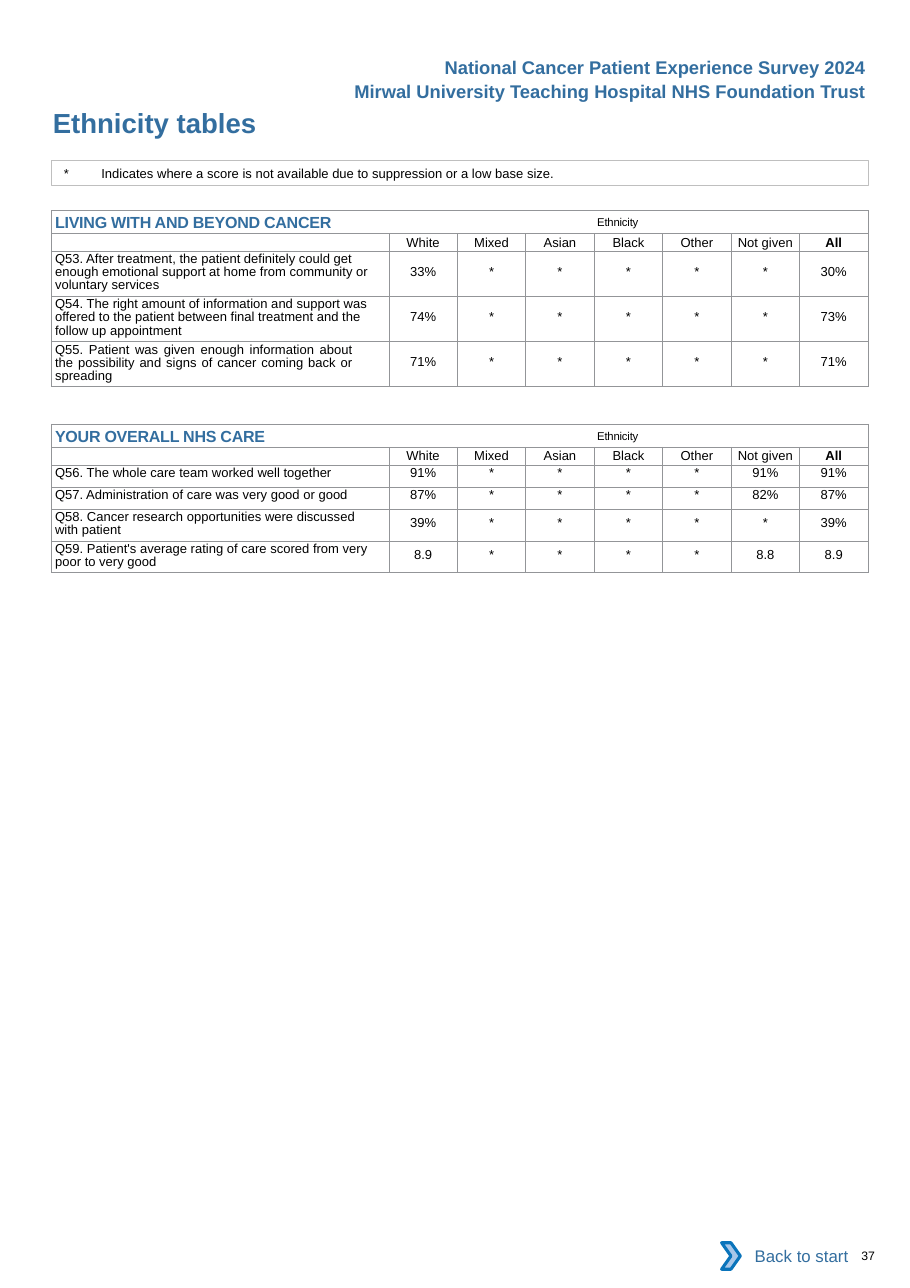
import pptx
import pptx.util
import pptx.dml.color
import pptx.enum.shapes
import pptx.enum.text
import pptx.oxml.ns
from lxml import etree

Inches = pptx.util.Inches
Pt = pptx.util.Pt
ALIGN = pptx.enum.text.PP_ALIGN
ANCHOR = pptx.enum.text.MSO_ANCHOR
SHAPE = pptx.enum.shapes.MSO_SHAPE
qn = pptx.oxml.ns.qn

BLUE, BLACK, GRID = "336E9F", "000000", "939598"
TITLE = "Ethnicity tables"
HEADINGS = [
    ("Mirwal University Teaching Hospital NHS Foundation Trust", 3.09, 0.68),
    ("National Cancer Patient Experience Survey 2024", 3.92, 0.46),
]
NOTE = "*\tIndicates where a score is not available due to suppression or a low base size."
GROUPS = ["White", "Mixed", "Asian", "Black", "Other", "Not given", "All"]
TABLES = [
    ("LIVING WITH AND BEYOND CANCER", 1.91, [
        ("Q53. After treatment, the patient definitely could get enough emotional support "
         "at home from community or voluntary services", 3, "33% * * * * * 30%"),
        ("Q54. The right amount of information and support was offered to the patient "
         "between final treatment and the follow up appointment", 3, "74% * * * * * 73%"),
        ("Q55. Patient was given enough information about the possibility and signs of "
         "cancer coming back or spreading", 3, "71% * * * * * 71%"),
    ]),
    ("YOUR OVERALL NHS CARE", 3.85, [
        ("Q56. The whole care team worked well together", 1, "91% * * * * 91% 91%"),
        ("Q57. Administration of care was very good or good", 1, "87% * * * * 82% 87%"),
        ("Q58. Cancer research opportunities were discussed with patient", 2,
         "39% * * * * * 39%"),
        ("Q59. Patient's average rating of care scored from very poor to very good", 2,
         "8.9 * * * * 8.8 8.9"),
    ]),
]
JUSTIFIED = "Q55"
LEFT, WIDTH, QUESTION_WIDTH = 0.47, 7.41, 3.06
SCORE_WIDTH = (WIDTH - QUESTION_WIDTH) / len(GROUPS)
HEADER_HEIGHTS = [0.21, 0.16]
ROW_HEIGHTS = {1: 0.2, 2: 0.29, 3: 0.41}
SCORE_TOPS = {1: 0.01, 2: 0.06, 3: 0.12}


def color(value):
    return pptx.dml.color.RGBColor.from_string(value)


def style(font, size, value=BLACK, bold=False):
    font.name = "Arial"
    font.size = Pt(size)
    font.bold = bold
    font.color.rgb = color(value)


def set_margins(target, left=0, top=0, right=0, bottom=0):
    target.margin_left, target.margin_top = Inches(left), Inches(top)
    target.margin_right, target.margin_bottom = Inches(right), Inches(bottom)


def add_tab(paragraph, position):
    tabs = etree.SubElement(paragraph._p.get_or_add_pPr(), qn("a:tabLst"))
    etree.SubElement(tabs, qn("a:tab"), pos=str(Inches(position)), algn="l")


def write(frame, text, size, value=BLACK, bold=False, align=ALIGN.LEFT):
    paragraph = frame.paragraphs[0]
    paragraph.text = text
    paragraph.alignment = align
    style(paragraph.font, size, value, bold)
    return paragraph


def add_text(slide, text, box, size, value=BLACK, bold=False, align=ALIGN.LEFT):
    shape = slide.shapes.add_textbox(*map(Inches, box))
    write(shape.text_frame, text, size, value, bold, align)
    return shape.text_frame


def add_box(shapes, kind, box, fill=None, line=None, width=0.5):
    shape = shapes.add_shape(kind, *map(Inches, box))
    shape.shadow.inherit = False
    if fill:
        shape.fill.solid()
        shape.fill.fore_color.rgb = color(fill)
    else:
        shape.fill.background()
    if line:
        shape.line.color.rgb = color(line)
        shape.line.width = Pt(width)
    else:
        shape.line.fill.background()
    return shape


def draw_borders(cell):
    cell.fill.background()
    properties = cell._tc.get_or_add_tcPr()
    for index, side in enumerate(["lnL", "lnR", "lnT", "lnB"]):
        line = etree.Element(qn("a:" + side), w=str(Pt(0.5)))
        fill = etree.SubElement(line, qn("a:solidFill"))
        etree.SubElement(fill, qn("a:srgbClr"), val=GRID)
        properties.insert(index, line)


def fill_heading(cell, heading):
    set_margins(cell, left=0.03)
    cell.vertical_anchor = ANCHOR.MIDDLE
    paragraph = cell.text_frame.paragraphs[0]
    add_tab(paragraph, 4.92)
    for text, size, value, bold in [(heading + "\t", 10.5, BLUE, True),
                                    ("Ethnicity", 12.8, BLACK, False)]:
        run = paragraph.add_run()
        run.text = text
        style(run.font, size, value, bold)
        properties = run._r.get_or_add_rPr()
        properties.set("spc", "-15")
    properties.set("baseline", "10000")


def fill_question(cell, question, lines):
    justified = question.startswith(JUSTIFIED)
    set_margins(cell, left=0.03, top=0.01 if lines == 1 else 0.02,
                right=0.33 if justified else 0.14)
    paragraph = write(cell.text_frame, question, 8.5,
                      align=ALIGN.JUSTIFY if justified else ALIGN.LEFT)
    if lines > 1:
        paragraph.line_spacing = Pt(8.6)


def add_scores(slide, heading, top, questions):
    heights = HEADER_HEIGHTS + [ROW_HEIGHTS[lines] for _, lines, _ in questions]
    table = slide.shapes.add_table(
        len(heights), len(GROUPS) + 1, Inches(LEFT), Inches(top),
        Inches(WIDTH), Inches(sum(heights))).table
    table.first_row = table.horz_banding = False
    for index, column in enumerate(table.columns):
        column.width = Inches(SCORE_WIDTH if index else QUESTION_WIDTH)
    for row, height in zip(table.rows, heights):
        row.height = Inches(height)
    for cell in table.iter_cells():
        draw_borders(cell)
        set_margins(cell)

    table.cell(0, 0).merge(table.cell(0, len(GROUPS)))
    fill_heading(table.cell(0, 0), heading)
    corner = table.cell(1, 0).text_frame.paragraphs[0]
    etree.SubElement(corner._p, qn("a:endParaRPr"), sz="850")
    for column, group in enumerate(GROUPS, 1):
        cell = table.cell(1, column)
        cell.vertical_anchor = ANCHOR.MIDDLE
        paragraph = write(cell.text_frame, group, 8.5, bold=group == "All", align=ALIGN.CENTER)
        paragraph.line_spacing = Pt(9.9)
    for row, (question, lines, scores) in enumerate(questions, len(HEADER_HEIGHTS)):
        fill_question(table.cell(row, 0), question, lines)
        for column, score in enumerate(scores.split(), 1):
            cell = table.cell(row, column)
            set_margins(cell, top=SCORE_TOPS[lines])
            write(cell.text_frame, score, 8.5, align=ALIGN.CENTER)


def main():
    presentation = pptx.Presentation()
    presentation.slide_width, presentation.slide_height = Inches(8.26), Inches(11.69)
    slide = presentation.slides.add_slide(presentation.slide_layouts[5])

    title = slide.shapes.title
    title.left, title.top = Inches(LEFT), Inches(0.96)
    title.width, title.height = Inches(4.5), Inches(0.3)
    set_margins(title.text_frame, left=0.01)
    title.text_frame.vertical_anchor = ANCHOR.TOP
    write(title.text_frame, TITLE, 18, BLUE, True)

    for heading in TABLES:
        add_scores(slide, *heading)

    note = add_box(slide.shapes, SHAPE.RECTANGLE, (LEFT, 1.46, WIDTH, 0.22), line="BFBFBF")
    set_margins(note.text_frame, left=0.11, top=0.04, bottom=0.04)
    note.text_frame.vertical_anchor = ANCHOR.TOP
    add_tab(write(note.text_frame, NOTE, 8.5), 0.34)

    for text, left, top in HEADINGS:
        frame = add_text(slide, text, (left, top, 7.96 - left, 0.3), 12, BLUE, True, ALIGN.RIGHT)
        frame.word_wrap = False

    back = slide.shapes.add_group_shape()
    label = add_box(back.shapes, SHAPE.RECTANGLE, (6.62, 11.19, 1.18, 0.42), "FFFFFF")
    label.text_frame.vertical_anchor = ANCHOR.MIDDLE
    write(label.text_frame, "Back to start", 11, BLUE, align=ALIGN.RIGHT)
    add_box(back.shapes, SHAPE.CHEVRON, (6.55, 11.28, 0.17, 0.24), "A8C7E9", "0A74BB", 2)

    page_number = add_text(slide, "37", (7.72, 11.33, 0.51, 0.13), 8)
    set_margins(page_number, left=0.1)
    page_number.word_wrap = True
    presentation.save("out.pptx")


if __name__ == "__main__":
    main()
